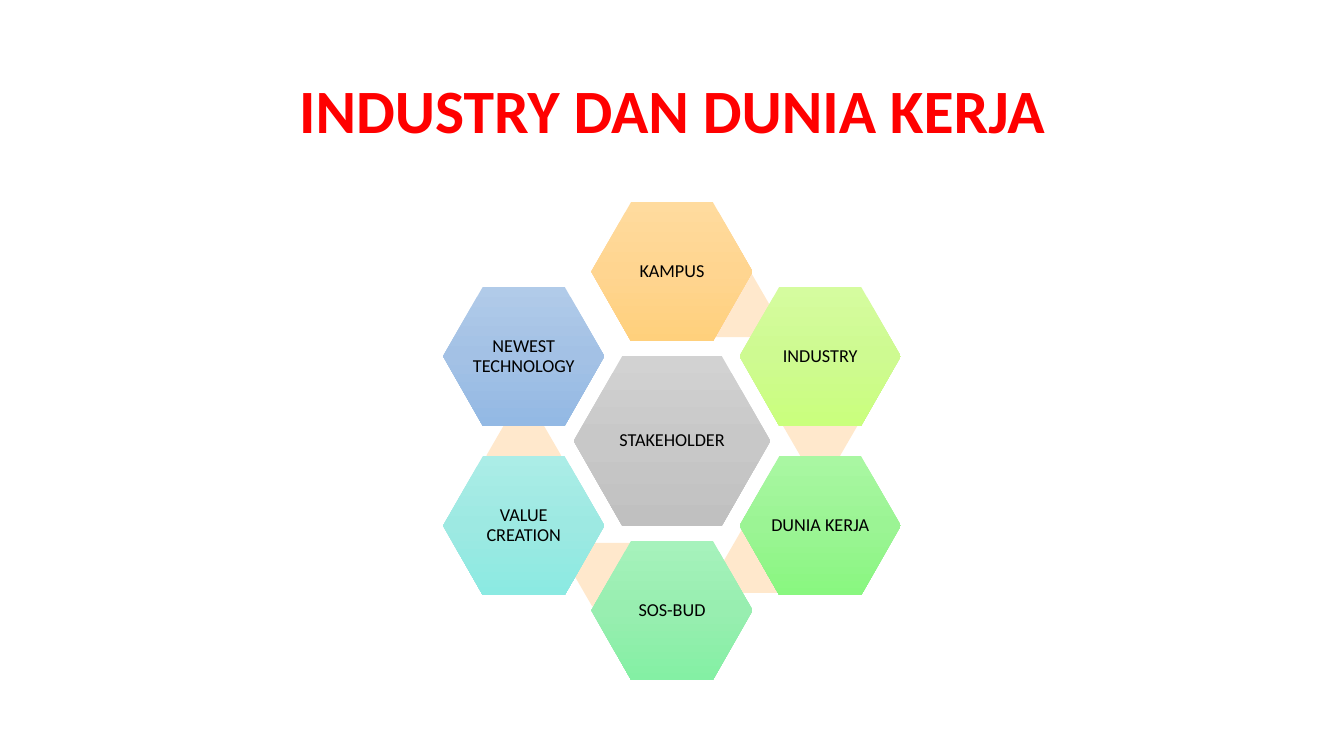
from copy import deepcopy

from pptx import Presentation
from pptx.dml.color import RGBColor
from pptx.enum.shapes import MSO_SHAPE
from pptx.enum.text import MSO_ANCHOR, PP_ALIGN
from pptx.oxml.ns import qn
from pptx.util import Inches, Pt

HEXAGON = MSO_SHAPE.HEXAGON
MIDDLE = MSO_ANCHOR.MIDDLE
CENTER = PP_ALIGN.CENTER

FONT = "Calibri"
RED = RGBColor(0xFF, 0x00, 0x00)
BLACK = RGBColor(0x00, 0x00, 0x00)
PEACH = RGBColor(0xFF, 0xE8, 0xCC)
GRAYS = (RGBColor(0xD2, 0xD2, 0xD2), RGBColor(0xC8, 0xC8, 0xC8), RGBColor(0xC0, 0xC0, 0xC0))
ORANGES = (RGBColor(0xFF, 0xDB, 0x9E), RGBColor(0xFF, 0xD5, 0x90), RGBColor(0xFF, 0xD0, 0x7C))
LIMES = (RGBColor(0xD5, 0xFC, 0x9F), RGBColor(0xCE, 0xFA, 0x91), RGBColor(0xCA, 0xFF, 0x7D))
GREENS = (RGBColor(0xA9, 0xF7, 0xA2), RGBColor(0x9B, 0xF4, 0x94), RGBColor(0x89, 0xF7, 0x80))
MINTS = (RGBColor(0xA6, 0xF2, 0xBC), RGBColor(0x98, 0xEE, 0xB0), RGBColor(0x84, 0xF0, 0xA4))
TEALS = (RGBColor(0xAB, 0xED, 0xE7), RGBColor(0x9D, 0xE9, 0xE2), RGBColor(0x8B, 0xEA, 0xE2))
BLUES = (RGBColor(0xB1, 0xCB, 0xE9), RGBColor(0xA3, 0xC1, 0xE5), RGBColor(0x93, 0xB9, 0xE4))

SLIDE_WIDTH, SLIDE_HEIGHT = 13.33, 7.5
CENTER_X, CENTER_Y = SLIDE_WIDTH / 2, 4.375
COLUMN, ROW = 1.47, 0.84
HUB_SIZE = (1.95, 1.69)
NODE_SIZE = (1.6, 1.38)
LINK_SIZE = (0.74, 0.63)

# label, shades, (column, row) of the node, (column, row) of the link behind it
RING = [
    ("KAMPUS", ORANGES, (0, -2), (0.41, -1.6)),
    ("INDUSTRY", LIMES, (1, -1), (1, -0.18)),
    ("DUNIA KERJA", GREENS, (1, 1), (0.6, 1.42)),
    ("SOS-BUD", MINTS, (0, 2), (-0.41, 1.58)),
    ("VALUE CREATION", TEALS, (-1, 1), (-1, 0.17)),
    ("NEWEST TECHNOLOGY", BLUES, (-1, -1), None),
]


def write_text(shape, text, size, color, bold=False):
    frame = shape.text_frame
    frame.word_wrap = True
    frame.vertical_anchor = MIDDLE
    paragraph = frame.paragraphs[0]
    paragraph.text = text
    paragraph.alignment = CENTER
    paragraph.line_spacing = 0.9
    font = paragraph.font
    font.name, font.size, font.bold = FONT, Pt(size), bold
    font.color.rgb = color


def add_title(slide, text):
    title = slide.shapes.add_textbox(
        Inches(0.92), Inches(0.4), Inches(11.5), Inches(1.45))
    write_text(title, text, 44, RED, bold=True)


def add_hexagon(slide, cell, size, adjustment):
    column, row = cell
    width, height = size
    shape = slide.shapes.add_shape(
        HEXAGON,
        Inches(CENTER_X + column * COLUMN - width / 2),
        Inches(CENTER_Y + row * ROW - height / 2),
        Inches(width), Inches(height))
    shape.adjustments[0] = adjustment
    shape.shadow.inherit = False
    shape.line.fill.background()
    return shape


def add_link(slide, cell):
    link = add_hexagon(slide, cell, LINK_SIZE, 0.289)
    link.fill.solid()
    link.fill.fore_color.rgb = PEACH


def fill_shades(shape, shades):
    shape.fill.gradient()
    shape.fill.gradient_angle = 270
    stop_list = shape.element.spPr.find(".//" + qn("a:gsLst"))
    stop_list.append(deepcopy(stop_list[0]))
    for index, (stop, shade) in enumerate(zip(shape.fill.gradient_stops, shades)):
        stop.position = index / 2
        stop.color.rgb = shade


def add_node(slide, label, shades, cell, size):
    node = add_hexagon(slide, cell, size, 0.286)
    fill_shades(node, shades)
    frame = node.text_frame
    frame.margin_left = frame.margin_right = 0
    frame.margin_top = frame.margin_bottom = Inches(0.02)
    write_text(node, label, 13, BLACK)


def main():
    presentation = Presentation()
    presentation.slide_width = Inches(SLIDE_WIDTH)
    presentation.slide_height = Inches(SLIDE_HEIGHT)
    slide = presentation.slides.add_slide(presentation.slide_layouts[6])

    add_title(slide, "INDUSTRY DAN DUNIA KERJA")
    add_node(slide, "STAKEHOLDER", GRAYS, (0, 0), HUB_SIZE)
    for label, shades, cell, link_cell in RING:
        if link_cell:
            add_link(slide, link_cell)
        add_node(slide, label, shades, cell, NODE_SIZE)

    presentation.save("out.pptx")


if __name__ == "__main__":
    main()
